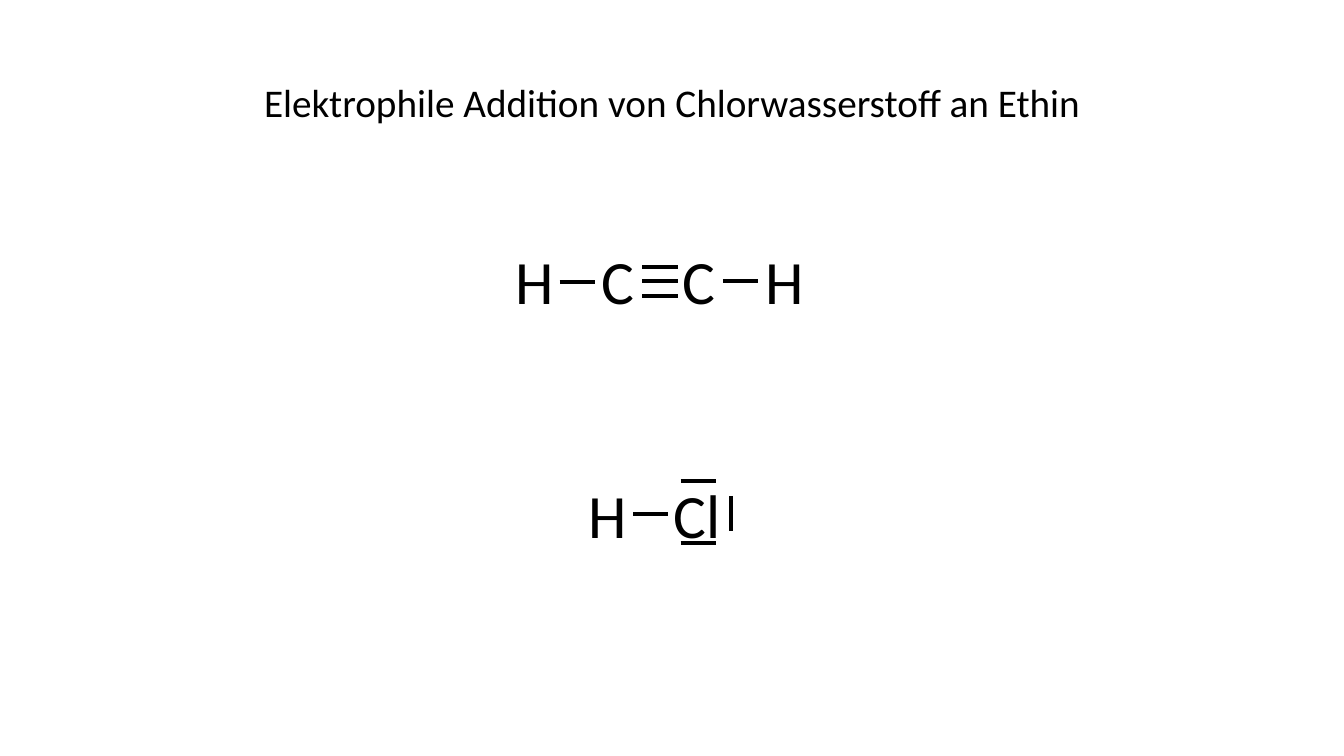
import pptx
import pptx.dml.color
import pptx.enum.shapes
import pptx.enum.text
import pptx.oxml.ns
import pptx.util
from lxml import etree
from pptx.util import Inches

BLACK = pptx.dml.color.RGBColor(0, 0, 0)
WHITE = pptx.dml.color.RGBColor(255, 255, 255)
FONT = "Calibri"
BOND_LENGTH = 0.35
ATOM_HEIGHT = 0.84
ETHYNE_TOP = 2.36
CHLORIDE_TOP = 4.68
TITLE_ONLY = 5


def write_text(holder, text, size, align):
    frame = holder.text_frame
    frame.text = text
    frame.word_wrap = True
    frame.auto_size = pptx.enum.text.MSO_AUTO_SIZE.SHAPE_TO_FIT_TEXT
    frame.vertical_anchor = pptx.enum.text.MSO_ANCHOR.TOP
    paragraph = frame.paragraphs[0]
    paragraph.alignment = align
    font = paragraph.runs[0].font
    font_format = {"name": FONT, "size": pptx.util.Pt(size), "bold": False}
    for attribute, value in font_format.items():
        setattr(font, attribute, value)
    font.color.rgb = BLACK


def add_title(slide, text):
    title = slide.shapes.title
    place = {"left": 2.16, "top": 0.73, "width": 9.01, "height": 0.57}
    for attribute, value in place.items():
        setattr(title, attribute, Inches(value))
    write_text(title, text, 28, pptx.enum.text.PP_ALIGN.CENTER)


def add_atom(slide, symbol, left, top, width=0.58):
    atom = slide.shapes.add_textbox(
        Inches(left), Inches(top), Inches(width), Inches(ATOM_HEIGHT))
    write_text(atom, symbol, 44, pptx.enum.text.PP_ALIGN.LEFT)


def add_electron_pair(slide, x, y, upright=False):
    """Draw a bond or lone pair as a dash that starts at x, y."""
    end_x = x if upright else x + BOND_LENGTH
    end_y = y + BOND_LENGTH if upright else y
    dash = slide.shapes.add_connector(
        pptx.enum.shapes.MSO_CONNECTOR.STRAIGHT,
        Inches(x), Inches(y), Inches(end_x), Inches(end_y))
    dash.line.color.rgb = BLACK
    dash.line.width = pptx.util.Pt(3)
    etree.SubElement(dash.element.spPr, pptx.oxml.ns.qn("a:effectLst"))


def add_ethyne(slide):
    for symbol, left in (("H", 5.01), ("C", 5.87), ("C", 6.67), ("H", 7.49)):
        add_atom(slide, symbol, left, ETHYNE_TOP)
    for x, y in ((5.55, 2.8), (6.37, 2.65), (6.37, 2.79), (6.37, 2.94), (7.17, 2.79)):
        add_electron_pair(slide, x, y)


def add_hydrogen_chloride(slide):
    add_atom(slide, "H", 5.74, CHLORIDE_TOP)
    add_atom(slide, "Cl", 6.58, CHLORIDE_TOP, width=0.91)
    for x, y in ((6.28, 5.1), (6.75, 4.77), (6.75, 5.39)):
        add_electron_pair(slide, x, y)
    add_electron_pair(slide, 7.25, 4.92, upright=True)


def main():
    deck = pptx.Presentation()
    deck.slide_width = Inches(13.33)
    deck.slide_height = Inches(7.5)
    slide = deck.slides.add_slide(deck.slide_layouts[TITLE_ONLY])
    slide.background.fill.solid()
    slide.background.fill.fore_color.rgb = WHITE
    add_title(slide, "Elektrophile Addition von Chlorwasserstoff an Ethin")
    add_ethyne(slide)
    add_hydrogen_chloride(slide)
    deck.save("out.pptx")


if __name__ == "__main__":
    main()
